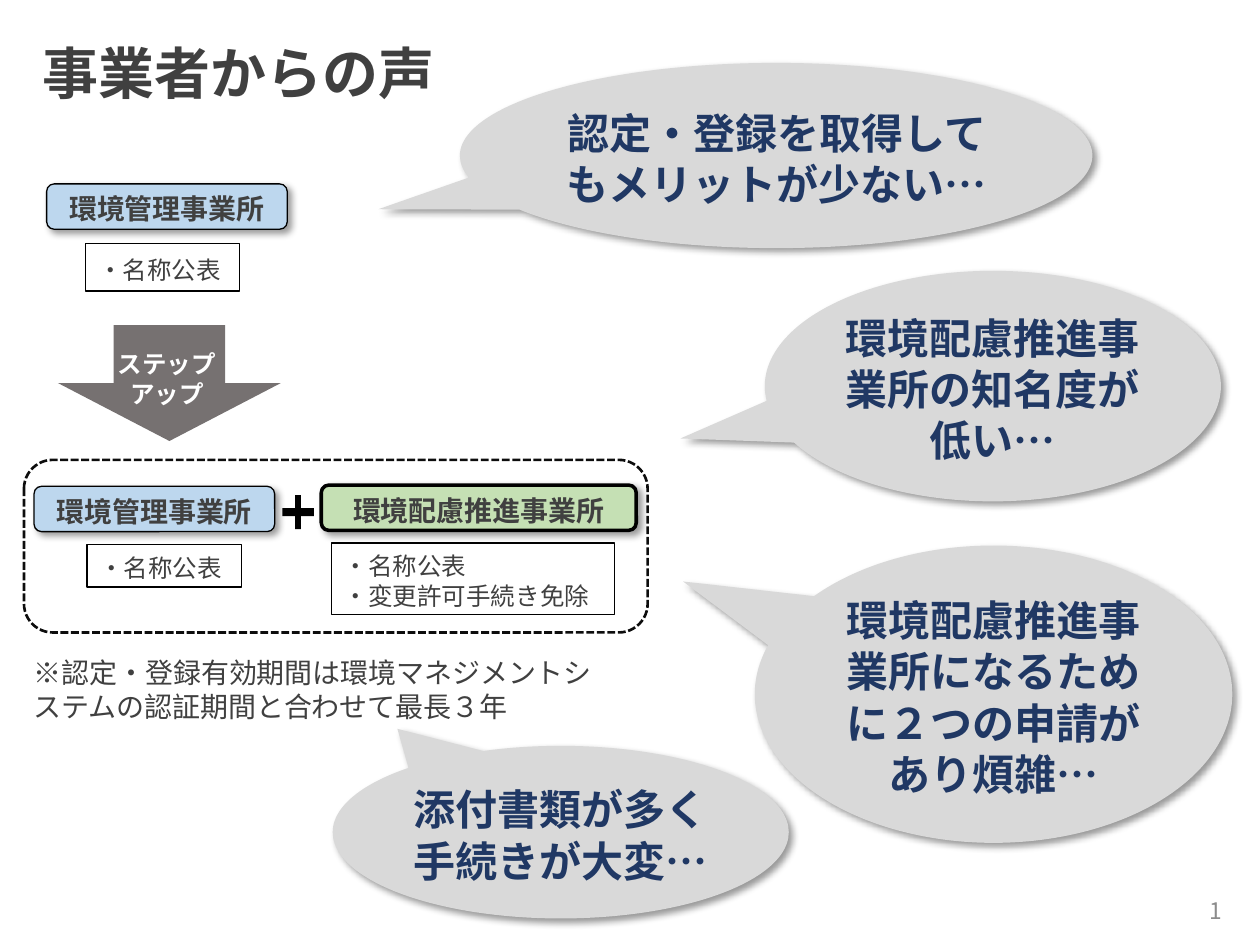
import lxml.etree
import pptx
import pptx.dml.color
import pptx.enum.dml
import pptx.enum.shapes
import pptx.enum.text
import pptx.oxml
import pptx.oxml.ns
import pptx.util

RGB = pptx.dml.color.RGBColor
SHAPE = pptx.enum.shapes.MSO_SHAPE
ALIGN = pptx.enum.text.PP_ALIGN
ANCHOR = pptx.enum.text.MSO_ANCHOR
qn = pptx.oxml.ns.qn

FONT = "Noto Sans CJK JP"
CELL = 0.1
LEADING = 1.22
BLACK = RGB(0x00, 0x00, 0x00)
WHITE = RGB(0xFF, 0xFF, 0xFF)
INK = RGB(0x40, 0x40, 0x40)
FRAME = RGB(0x0D, 0x0D, 0x0D)
NAVY = RGB(0x20, 0x38, 0x64)
BLUE = RGB(0xBD, 0xD7, 0xEE)
GREEN = RGB(0xC5, 0xE0, 0xB4)
SILVER = RGB(0xD9, 0xD9, 0xD9)
STONE = RGB(0x76, 0x71, 0x71)
GREY = RGB(0x8C, 0x8C, 0x8C)


def emu(box):
    """Turn a box in grid columns and rows into slide lengths."""
    return [pptx.util.Inches(v * CELL) for v in box]


def within(box, x, y, w, h):
    """Return a box placed by columns and rows from the corner of another."""
    return box[0] + x, box[1] + y, w, h


def write(sp, lines, size, color=INK, bold=False, align=ALIGN.LEFT, anchor=ANCHOR.MIDDLE):
    """Fill a shape with formatted paragraphs."""
    tf = sp.text_frame
    tf.word_wrap = True
    tf.vertical_anchor = anchor
    tf.margin_top = pptx.util.Inches(0.08)
    tf.text = "\n".join(lines)
    for p in tf.paragraphs:
        p.alignment = align
        p.line_spacing = pptx.util.Pt(round(size * LEADING, 1))
        for r in p.runs:
            r.font.size = pptx.util.Pt(size)
            r.font.bold = bold
            r.font.color.rgb = color
            r.font.name = FONT
            ea = lxml.etree.Element(qn("a:ea"), typeface=FONT)
            r.font._element.find(qn("a:latin")).addnext(ea)


def add_text(s, box, lines, size, **style):
    """Add a text box."""
    write(s.shapes.add_textbox(*emu(box)), lines, size, **style)


def add_shadow(sp):
    """Give a shape a soft shadow to the lower right."""
    effects = sp._element.spPr.find(qn("a:effectLst"))
    effects.append(pptx.oxml.parse_xml(
        '<a:outerShdw xmlns:a="http://schemas.openxmlformats.org/drawingml/2006/main" '
        'blurRad="50800" dist="38100" dir="2700000" algn="tl" rotWithShape="0">'
        '<a:srgbClr val="000000"><a:alpha val="40000"/></a:srgbClr></a:outerShdw>'))


def add_shape(s, kind, box, fill=None, line=None, width=0.75, shadow=False, adjust=()):
    """Add a preset shape with its fill, outline and shadow."""
    sp = s.shapes.add_shape(kind, *emu(box))
    sp.shadow.inherit = False
    if shadow:
        add_shadow(sp)
    if fill is None:
        sp.fill.background()
    else:
        sp.fill.solid()
        sp.fill.fore_color.rgb = fill
    if line is None:
        sp.line.fill.background()
    else:
        sp.line.color.rgb = line
        sp.line.width = pptx.util.Pt(width)
    for i, value in enumerate(adjust):
        sp.adjustments[i] = value
    return sp


def add_office(s, box, name, fill, benefits, benefit_box, width=0.75):
    """Draw an office label with its list of benefits below."""
    sp = add_shape(s, SHAPE.ROUNDED_RECTANGLE, within(box, 0, 0, box[2], 3.6),
                   fill, BLACK, width, shadow=True)
    write(sp, [name], 16, bold=True, align=ALIGN.CENTER)
    sp = add_shape(s, SHAPE.RECTANGLE, within(box, *benefit_box), WHITE, BLACK)
    write(sp, benefits, 14)


def add_step(s, box):
    """Draw the step-up arrow with its caption."""
    add_shape(s, SHAPE.DOWN_ARROW, box, STONE)
    add_text(s, within(box, 0.6, 2.3, 16.1, 3.5), ["ステップ", "アップ"], 14,
             color=WHITE, bold=True, align=ALIGN.CENTER)


def add_upgrade(s, box):
    """Draw the dashed frame that joins the two offices."""
    sp = add_shape(s, SHAPE.ROUNDED_RECTANGLE, box, line=FRAME, width=1.5)
    sp.line.dash_style = pptx.enum.dml.MSO_LINE.SQUARE_DOT
    add_office(s, within(box, 0.8, 2.1, 19.1, 8), "環境管理事業所", BLUE,
               ["・名称公表"], (4.2, 4.6, 12.3, 3.4))
    add_office(s, within(box, 23.6, 2, 25, 10.3), "環境配慮推進事業所", GREEN,
               ["・名称公表", "・変更許可手続き免除"], (0.8, 4.6, 22.5, 5.7), 2)
    add_shape(s, SHAPE.CROSS, within(box, 20.5, 2.8, 2.5, 2.7), BLACK, adjust=[0.412])


def add_scheme(s, box):
    """Draw the path from one office type to the next, with its note."""
    add_office(s, within(box, 2, 0, 19.1, 8.5), "環境管理事業所", BLUE,
               ["・名称公表"], (3.1, 4.7, 12.2, 3.8))
    add_step(s, within(box, 2.9, 11.2, 17.7, 9.2))
    add_upgrade(s, within(box, 0.2, 21.9, 49.5, 13.7))
    add_text(s, within(box, 0, 36.6, 47.5, 6.2),
             ["※認定・登録有効期間は環境マネジメントシステムの認証期間と合わせて最長３年"],
             16, anchor=ANCHOR.TOP)


def add_voice(s, box, text, tail):
    """Draw one speech balloon."""
    sp = add_shape(s, SHAPE.OVAL_CALLOUT, box, SILVER, shadow=True, adjust=tail)
    write(sp, [text], 24, color=NAVY, bold=True, align=ALIGN.CENTER)


def add_voices(s, box):
    """Draw the balloons around the scheme."""
    voices = [
        ((10.1, 0, 50.2, 14.7), "認定・登録を取得してもメリットが少ない…", (-0.629, 0.29)),
        ((34.3, 16.5, 36.2, 18.3), "環境配慮推進事業所の知名度が低い…", (-0.685, 0.227)),
        ((33.5, 38.3, 37.9, 23.6), "環境配慮推進事業所になるために２つの申請があり煩雑…", (-0.65, -0.379)),
        ((0, 54.2, 36.2, 13.7), "添付書類が多く手続きが大変…", (-0.358, -0.599)),
    ]
    for place, text, tail in voices:
        add_voice(s, within(box, *place), text, tail)


def main():
    """Build the slide and save it."""
    prs = pptx.Presentation()
    prs.slide_width, prs.slide_height = emu((100, 75))
    s = prs.slides.add_slide(prs.slide_layouts[6])
    add_text(s, (75.5, 70.1, 22.5, 4), ["1"], 13, color=GREY, align=ALIGN.RIGHT)
    add_scheme(s, (1.7, 14.6, 49.7, 42.8))
    add_voices(s, (26.4, 5, 71.4, 67.9))
    add_text(s, (2.4, 2.2, 34.1, 6.2), ["事業者からの声"], 32, bold=True, anchor=ANCHOR.TOP)
    prs.save("out.pptx")


if __name__ == "__main__":
    main()
